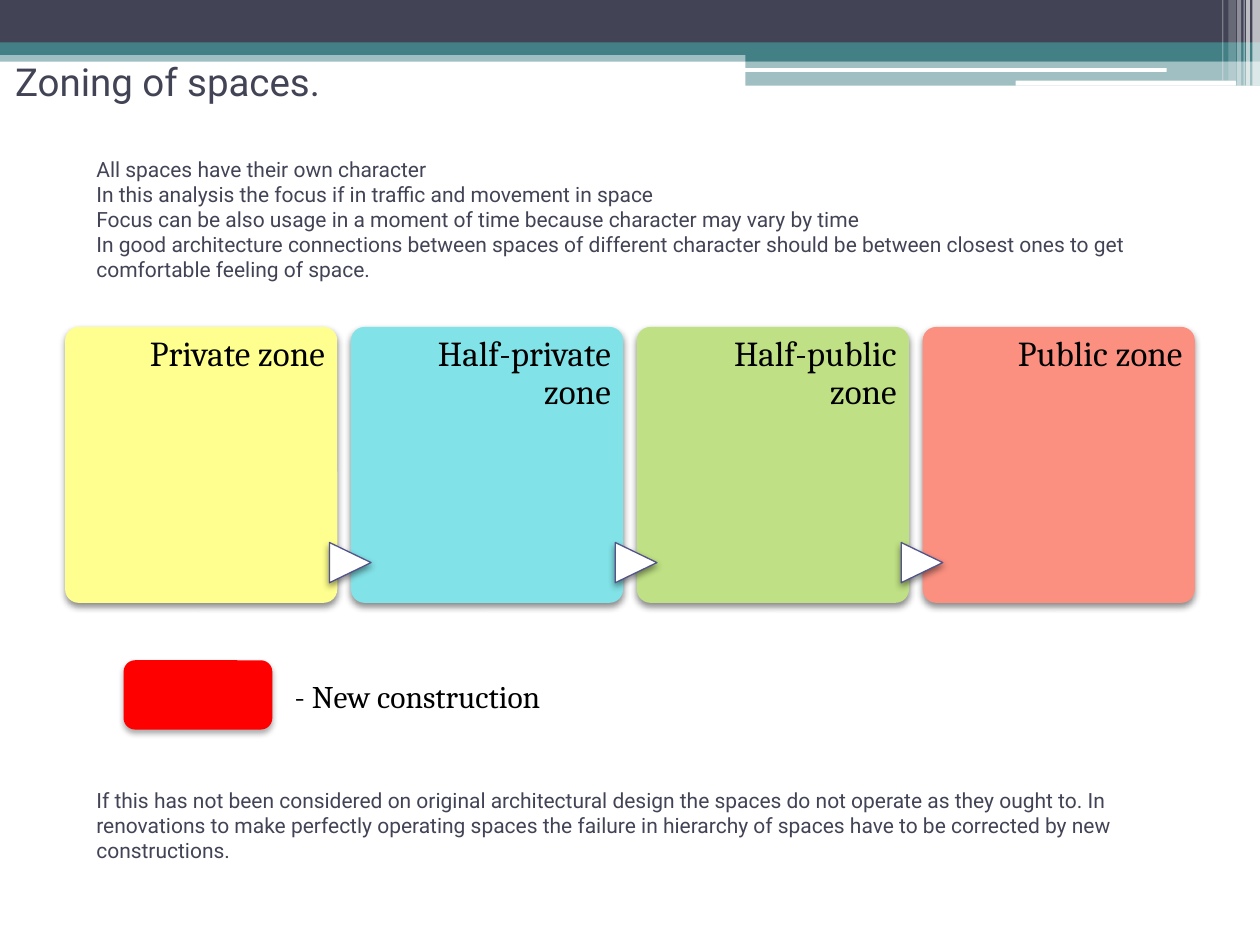
import dataclasses

import lxml.etree
import pptx
import pptx.dml.color
import pptx.enum.shapes
import pptx.enum.text
import pptx.oxml.ns
import pptx.util

Pt = pptx.util.Pt
SHAPE = pptx.enum.shapes.MSO_SHAPE
ALIGN = pptx.enum.text.PP_ALIGN
ANCHOR = pptx.enum.text.MSO_ANCHOR
qn = pptx.oxml.ns.qn


@dataclasses.dataclass(frozen=True)
class Theme:
    ink: str = "424456"
    teal: str = "438086"
    white: str = "FFFFFF"
    black: str = "000000"
    red: str = "FF0000"
    arrow_line: str = "53548A"
    sans: str = "Roboto"
    serif: str = "Cambria"
    title_size: float = 22
    zone_size: float = 20
    legend_size: float = 18
    body_size: float = 12


THEME = Theme()

ZONES = [
    ("Private zone", "FFFF8F"),
    ("Half-private zone", "81E2E7"),
    ("Half-public zone", "BFE084"),
    ("Public zone", "FB9081"),
]
PRINCIPLES = [
    "All spaces have their own character",
    "In this analysis the focus if in traffic and movement in space",
    "Focus can be also usage in a moment of time because character may vary by time",
    "In good architecture connections between spaces of different character "
    "should be between closest ones to get comfortable feeling of space.",
]
CONCLUSION = [
    "If this has not been considered on original architectural design the spaces "
    "do not operate as they ought to. In renovations to make perfectly operating "
    "spaces the failure in hierarchy of spaces have to be corrected by new constructions.",
]


def rgb(color):
    return pptx.dml.color.RGBColor.from_string(color)


def place(box):
    return [Pt(length) for length in box]


def add_block(slide, kind, box, color, opacity=100):
    """Add a filled shape without line or shadow; opacity is in percent."""
    block = slide.shapes.add_shape(kind, *place(box))
    block.shadow.inherit = False
    block.fill.solid()
    block.fill.fore_color.rgb = rgb(color)
    block.line.fill.background()
    if opacity < 100:
        tint = block.fill._xPr.find(".//" + qn("a:srgbClr"))
        lxml.etree.SubElement(tint, qn("a:alpha"), val=str(opacity * 1000))
    return block


def drop_shadow(block, opacity=45, blur=4, distance=2):
    effects = block._element.spPr.find(qn("a:effectLst"))
    shadow = lxml.etree.SubElement(
        effects, qn("a:outerShdw"), blurRad=str(Pt(blur)), dist=str(Pt(distance)),
        dir="5400000", algn="ctr", rotWithShape="0")
    tint = lxml.etree.SubElement(shadow, qn("a:srgbClr"), val=THEME.black)
    lxml.etree.SubElement(tint, qn("a:alpha"), val=str(opacity * 1000))


def write(frame, paragraphs, font, size, color, align=ALIGN.LEFT):
    frame.word_wrap = True
    for index, words in enumerate(paragraphs):
        paragraph = frame.add_paragraph() if index else frame.paragraphs[0]
        paragraph.alignment = align
        run = paragraph.add_run()
        run.text = words
        run.font.name = font
        run.font.size = Pt(size)
        run.font.color.rgb = rgb(color)


def add_banner(slide, box):
    left, top, width, height = box
    right = left + width
    tab = 425.9
    bars = [  # left, top, width, height, colour, opacity
        (left, 28.8, width, 6.5, THEME.teal, 50),
        (left, 0, width, 24.5, THEME.ink, 100),
        (left, 24.2, width, 7.2, THEME.teal, 100),
        (tab, 28.1, right - tab, 7.2, THEME.teal, 100),
        (tab, 35.3, right - tab, height - 35.3, THEME.teal, 50),
    ]
    for x, y, w, h, color, opacity in bars:
        add_block(slide, SHAPE.RECTANGLE, (x, top + y, w, h), color, opacity)

    for x, y, w, h in [(425.5, 38.9, 241.2, 2.2), (580.3, 46.1, 126, 2.9)]:
        add_block(slide, SHAPE.ROUNDED_RECTANGLE, (x, top + y, w, h), THEME.white)

    stripes = [  # distance from the right edge, width, height, opacity
        (4.4, 4.4, height, 65),
        (7.9, 2.2, height, 65),
        (9.4, 0.7, height, 60),
        (13, 2.2, height, 40),
        (18, 4.3, 46.1, 20),
        (21.6, 0.7, 46.1, 30),
    ]
    for inset, w, h, opacity in stripes:
        add_block(slide, SHAPE.RECTANGLE, (right - inset, top, w, h), THEME.white, opacity)


def add_title(slide, box):
    title = slide.shapes.title
    title.left, title.top, title.width, title.height = place(box)
    title.text_frame.vertical_anchor = ANCHOR.MIDDLE
    write(title.text_frame, ["Zoning of spaces."], THEME.sans, THEME.title_size, THEME.ink)


def add_body(slide, box, paragraphs):
    frame = slide.shapes.add_textbox(*place(box)).text_frame
    frame.vertical_anchor = ANCHOR.MIDDLE
    write(frame, paragraphs, THEME.sans, THEME.body_size, THEME.ink)


def add_zones(slide, box):
    """Lay the zone panels in a row, with an arrow over each gap."""
    left, top, width, height = box
    gap = 7.8
    panel_width = (width - gap * (len(ZONES) - 1)) / len(ZONES)
    label_inset, label_height = 28.5, 31.7
    arrow_width, arrow_height = 23, 23.8
    arrow_middle = top + 134.7

    for index, (name, color) in enumerate(ZONES):
        x = left + index * (panel_width + gap)
        panel = add_block(slide, SHAPE.ROUNDED_RECTANGLE, (x, top, panel_width, height), color)
        panel.adjustments[0] = 0.05
        drop_shadow(panel)

        label = slide.shapes.add_textbox(
            *place((x + label_inset, top + 0.4, panel_width - label_inset, label_height)))
        frame = label.text_frame
        frame.margin_left = frame.margin_bottom = 0
        frame.margin_top, frame.margin_right = Pt(5), Pt(7.2)
        write(frame, [name], THEME.serif, THEME.zone_size, THEME.black, ALIGN.RIGHT)
        frame.paragraphs[0].line_spacing = 0.9

        if index:
            arrow = add_block(
                slide, SHAPE.FLOWCHART_EXTRACT,
                (x - 0.4 - arrow_width / 2, arrow_middle - arrow_height / 2,
                 arrow_width, arrow_height), THEME.white)
            arrow.rotation = 90
            arrow.line.color.rgb = rgb(THEME.arrow_line)
            arrow.line.width = Pt(0.75)
            drop_shadow(arrow)


def add_legend(slide, box):
    left, top, width, height = box
    swatch_width, text_left, text_height = 85, 90.7, 29
    swatch = add_block(slide, SHAPE.ROUNDED_RECTANGLE,
                       (left, top, swatch_width, height), THEME.red)
    drop_shadow(swatch, 32, 3.5, 2.2)
    caption = slide.shapes.add_textbox(
        *place((left + text_left, top + (height - text_height) / 2 + 0.5,
                width - text_left, text_height)))
    write(caption.text_frame, ["- New construction"],
          THEME.serif, THEME.legend_size, THEME.black)


def main():
    deck = pptx.Presentation()
    deck.slide_width, deck.slide_height = Pt(720), Pt(540)
    slide = deck.slides.add_slide(deck.slide_layouts.get_by_name("Title Only"))
    add_banner(slide, (0, 0, 720, 49))
    add_zones(slide, (37.2, 186.8, 645.6, 157.7))
    add_legend(slide, (70.6, 377.3, 295.2, 39.6))
    add_title(slide, (1.4, 26, 648, 40.3))
    add_body(slide, (48, 105.1, 648, 40.3), PRINCIPLES)
    add_body(slide, (48, 451.4, 648, 40.3), CONCLUSION)
    deck.save("out.pptx")


if __name__ == "__main__":
    main()
